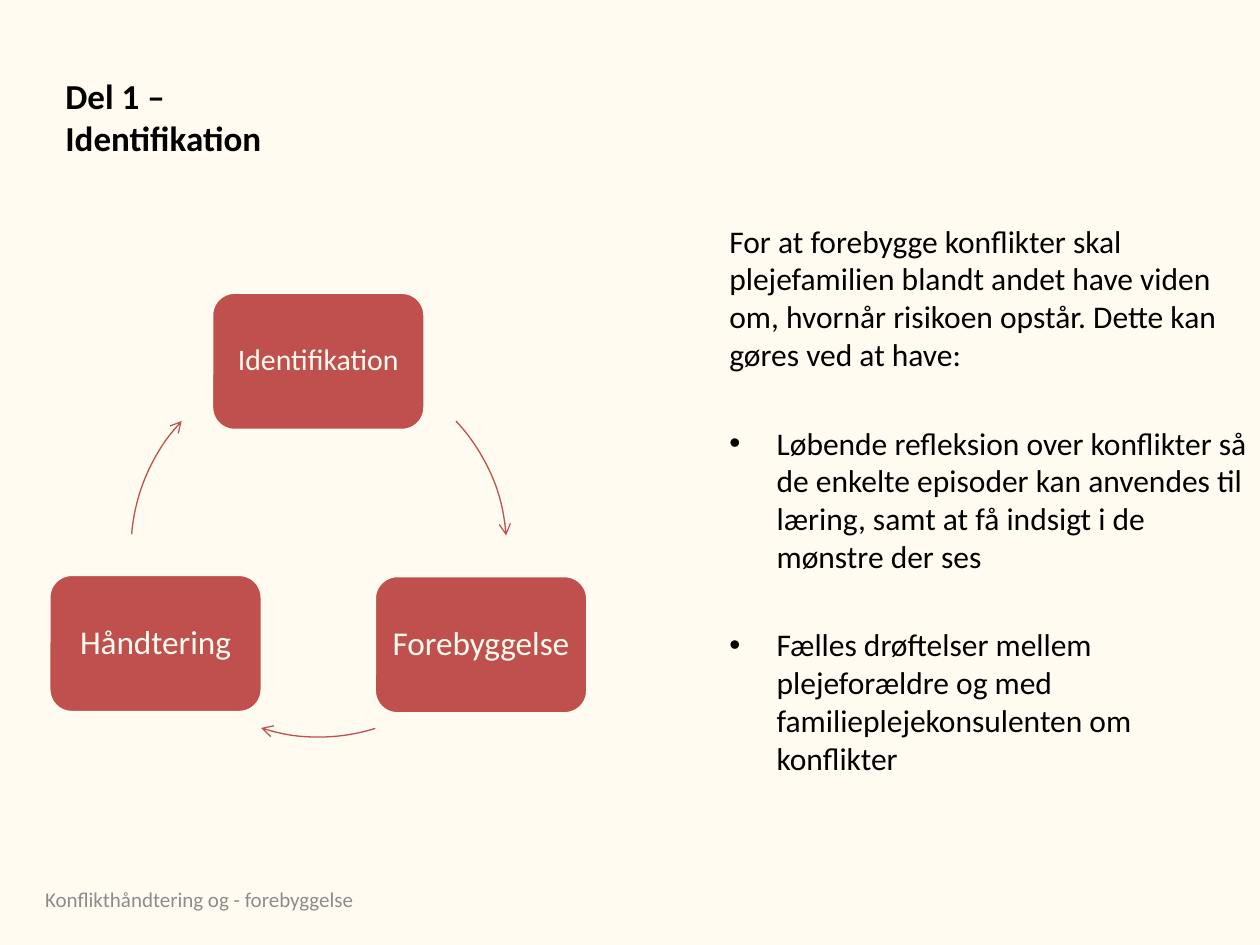
from lxml.etree import SubElement
from pptx import Presentation
from pptx.dml.color import RGBColor
from pptx.enum.shapes import MSO_SHAPE
from pptx.enum.text import MSO_ANCHOR, PP_ALIGN
from pptx.oxml.ns import qn
from pptx.util import Pt

COLORS = {"cream": "FFFBF0", "red": "C0504D", "black": "000000", "gray": "8C8C8C"}


def rgb(name):
    return RGBColor.from_string(COLORS[name])


def add_run(paragraph, text, size, color, bold=False):
    run = paragraph.add_run()
    run.text = text
    run.font.name = "Calibri"
    run.font.size = Pt(size)
    run.font.bold = bold
    run.font.color.rgb = rgb(color)


presentation = Presentation()
presentation.slide_width, presentation.slide_height = Pt(720), Pt(540)
slide = presentation.slides.add_slide(presentation.slide_layouts[5])
slide.background.fill.solid()
slide.background.fill.fore_color.rgb = rgb("cream")

# Title
title = slide.shapes.title
title.left, title.top, title.width, title.height = Pt(30.2), Pt(21.6), Pt(617.8), Pt(90)
title.text_frame.vertical_anchor = MSO_ANCHOR.MIDDLE
heading = title.text_frame.paragraphs[0]
heading.alignment = PP_ALIGN.LEFT
add_run(heading, "Del 1 –", 20, "black", bold=True)
heading.add_line_break()
add_run(heading, "Identifikation", 20, "black", bold=True)

# Footer
footer = slide.shapes.add_textbox(Pt(18.7), Pt(499.7), Pt(228.2), Pt(28.8))
footer.text_frame.word_wrap = True
footer.text_frame.vertical_anchor = MSO_ANCHOR.MIDDLE
add_run(footer.text_frame.paragraphs[0], "Konflikthåndtering og - forebyggelse", 12, "gray")

# Cycle steps: label, left, top, text size
steps = [
    ("Identifikation", 120.9, 167, 17),
    ("Forebyggelse", 213.9, 328.9, 19),
    ("Håndtering", 27.9, 328.2, 19),
]
for label, left, top, size in steps:
    step = slide.shapes.add_shape(MSO_SHAPE.ROUNDED_RECTANGLE, Pt(left), Pt(top), Pt(122), Pt(79))
    step.shadow.inherit = False
    step.fill.solid()
    step.fill.fore_color.rgb = rgb("red")
    step.line.color.rgb = rgb("cream")
    step.line.width = Pt(2)
    frame = step.text_frame
    frame.word_wrap = True
    frame.vertical_anchor = MSO_ANCHOR.MIDDLE
    frame.margin_left = frame.margin_right = frame.margin_top = frame.margin_bottom = Pt(5)
    name = frame.paragraphs[0]
    name.alignment = PP_ALIGN.CENTER
    name.line_spacing = 0.9
    add_run(name, label, size, "cream")

# Arrows on one common circle: start and end in degrees clockwise from the right
DEGREE = 0.6  # one degree in adjustment units
for start, end in [(316.9, 355.8), (72.5, 107.9), (184.6, 223.1)]:
    arrow = slide.shapes.add_shape(MSO_SHAPE.ARC, Pt(74.9), Pt(206.6), Pt(214.6), Pt(214.6))
    arrow.adjustments[0] = start * DEGREE
    arrow.adjustments[1] = end * DEGREE
    arrow.shadow.inherit = False
    arrow.fill.background()
    arrow.line.color.rgb = rgb("red")
    arrow.line.width = Pt(0.75)
    SubElement(arrow.line._get_or_add_ln(), qn("a:tailEnd"), type="arrow")

# Body text: introduction and two bullets
body = slide.shapes.add_textbox(Pt(409.7), Pt(123.1), Pt(310.3), Pt(362.2)).text_frame
body.word_wrap = True
add_run(
    body.paragraphs[0],
    "For at forebygge konflikter skal plejefamilien blandt andet have viden om, "
    "hvornår risikoen opstår. Dette kan gøres ved at have:",
    18, "black",
)
bullets = [
    "Løbende refleksion over konflikter så de enkelte episoder kan anvendes til "
    "læring, samt at få indsigt i de mønstre der ses",
    "Fælles drøftelser mellem plejeforældre og med familieplejekonsulenten om konflikter",
]
for text in bullets:
    bullet = body.add_paragraph()
    bullet.space_before = Pt(29)
    properties = bullet._p.get_or_add_pPr()
    properties.set("marL", str(Pt(27)))
    properties.set("indent", str(-Pt(27)))
    SubElement(properties, qn("a:buFont"), typeface="Arial")
    SubElement(properties, qn("a:buChar"), char="•")
    add_run(bullet, text, 18, "black")

presentation.save("out.pptx")
